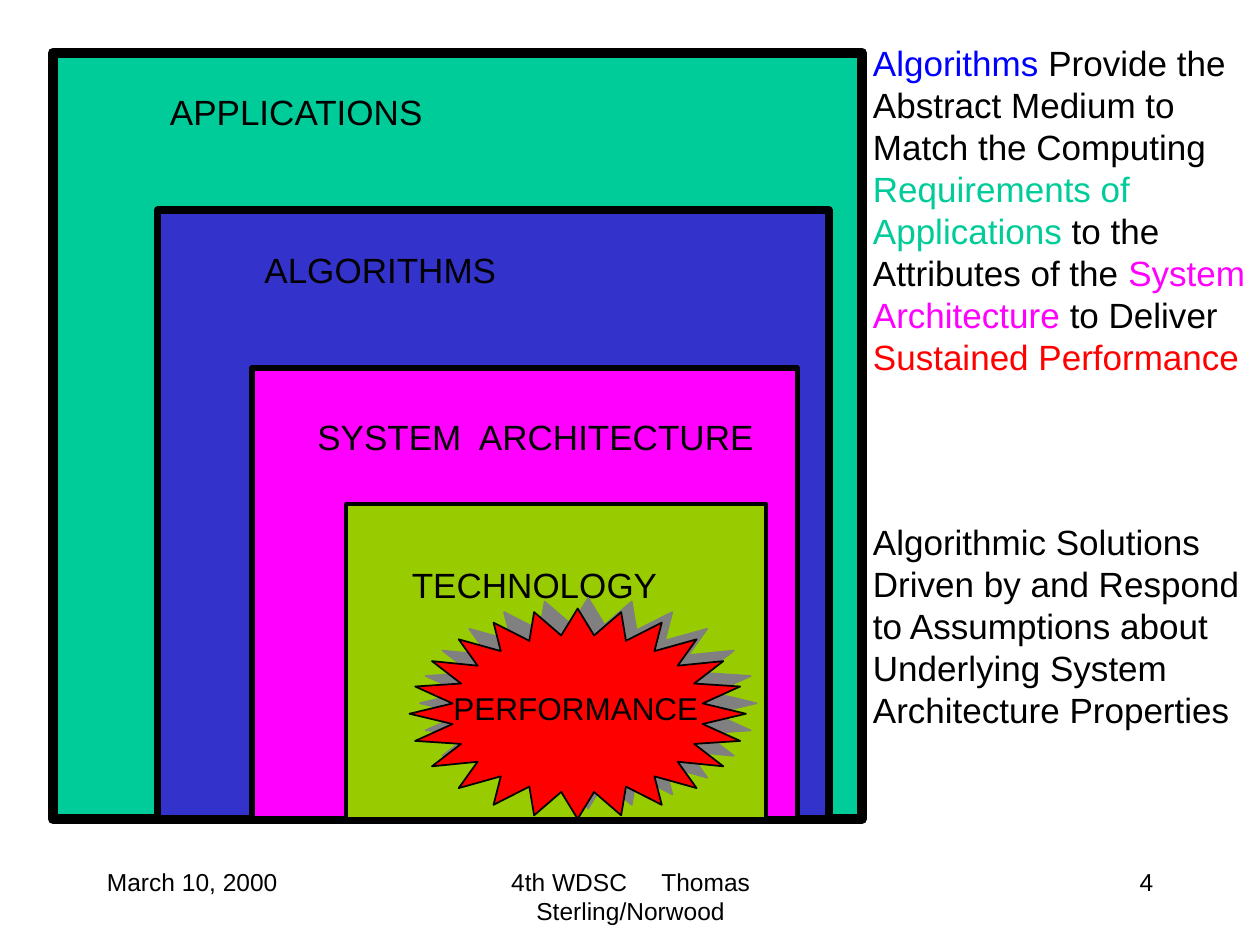
from lxml import etree
from pptx import Presentation
from pptx.dml.color import RGBColor
from pptx.enum.shapes import MSO_SHAPE
from pptx.enum.text import MSO_ANCHOR, PP_ALIGN
from pptx.oxml.ns import qn
from pptx.util import Inches, Pt

RECT, STAR = MSO_SHAPE.RECTANGLE, MSO_SHAPE.STAR_24_POINT
LEFT, CENTER, RIGHT = PP_ALIGN.LEFT, PP_ALIGN.CENTER, PP_ALIGN.RIGHT
TOP, MIDDLE = MSO_ANCHOR.TOP, MSO_ANCHOR.MIDDLE
COLORS = {
    "black": "000000", "blue": "0000FF", "teal": "00CC99", "indigo": "3333CC",
    "magenta": "FF00FF", "lime": "99CC00", "red": "FF0000", "gray": "808080",
}


def add_block(kind, box, fill, line_width):
    block = slide.shapes.add_shape(kind, *map(Inches, box))
    block.shadow.inherit = False
    block.fill.solid()
    block.fill.fore_color.rgb = RGBColor.from_string(COLORS[fill])
    block.line.color.rgb = RGBColor.from_string(COLORS["black"])
    block.line.width = Pt(line_width)
    return block


def add_text(box, pieces, size=20, align=LEFT, anchor=TOP):
    frame = slide.shapes.add_textbox(*map(Inches, box)).text_frame
    frame.word_wrap = True
    frame.vertical_anchor = anchor
    paragraph = frame.paragraphs[0]
    paragraph.alignment = align
    paragraph.font.name = "Arial"
    paragraph.font.size = Pt(size)
    for words, color in pieces:
        run = paragraph.add_run()
        run.text = words
        run.font.color.rgb = RGBColor.from_string(COLORS[color])
    return paragraph


prs = Presentation()
prs.slide_width, prs.slide_height = Inches(10), Inches(7.5)
slide = prs.slides.add_slide(prs.slide_layouts[6])

add_text((0.75, 6.83, 2.08, 0.5), [("March 10, 2000", "black")], 14)
event = add_text(
    (3.42, 6.83, 3.17, 0.5),
    [("4th WDSC", "black"), (" ", "black"), ("Thomas Sterling/Norwood", "black")],
    14, CENTER)
event.runs[1].font._element.set("spc", "1560")
add_text((7.17, 6.83, 2.08, 0.5), [("4", "black")], 14, RIGHT)

add_text((6.83, 0, 3.17, 3.33), [
    ("Algorithms ", "blue"),
    ("Provide the Abstract Medium to Match the Computing ", "black"),
    ("Requirements of Applications ", "teal"),
    ("to the Attributes of the ", "black"),
    ("System Architecture ", "magenta"),
    ("to Deliver ", "black"),
    ("Sustained Performance", "red"),
], anchor=MIDDLE)

floor = 6.5
layers = [
    ("APPLICATIONS", 0.42, 0.42, 6.42, "teal", 6, (1.25, 0.67, 4.25, 0.43)),
    ("ALGORITHMS", 1.25, 1.67, 5.33, "indigo", 4.5, (2, 1.92, 3.25, 0.43)),
    ("SYSTEM  ARCHITECTURE", 2, 2.92, 4.33, "magenta", 3, (2.42, 3.25, 3.75, 0.43)),
    ("TECHNOLOGY", 2.75, 4, 3.33, "lime", 2.25, (3.17, 4.42, 3.25, 0.43)),
]
for label, left, top, width, fill, line_width, label_box in layers:
    add_block(RECT, (left, top, width, floor - top), fill, line_width)
    add_text(label_box, [(label, "black")])

burst = add_block(STAR, (3.25, 4.83, 2.67, 1.67), "red", 1)
effects = burst._element.spPr.find(qn("a:effectLst"))
shadow = etree.SubElement(effects, qn("a:outerShdw"), dist=str(Pt(8.5)),
                          dir=str(315 * 60000), algn="ctr", rotWithShape="0")
etree.SubElement(shadow, qn("a:srgbClr"), val=COLORS["gray"])
add_text((3.5, 5.42, 2.42, 0.4), [("PERFORMANCE", "black")], 18)

add_text((6.83, 4.08, 3.17, 1.77), [
    ("Algorithmic Solutions Driven by and Respond to Assumptions about "
     "Underlying System Architecture Properties", "black"),
])

prs.save("out.pptx")
